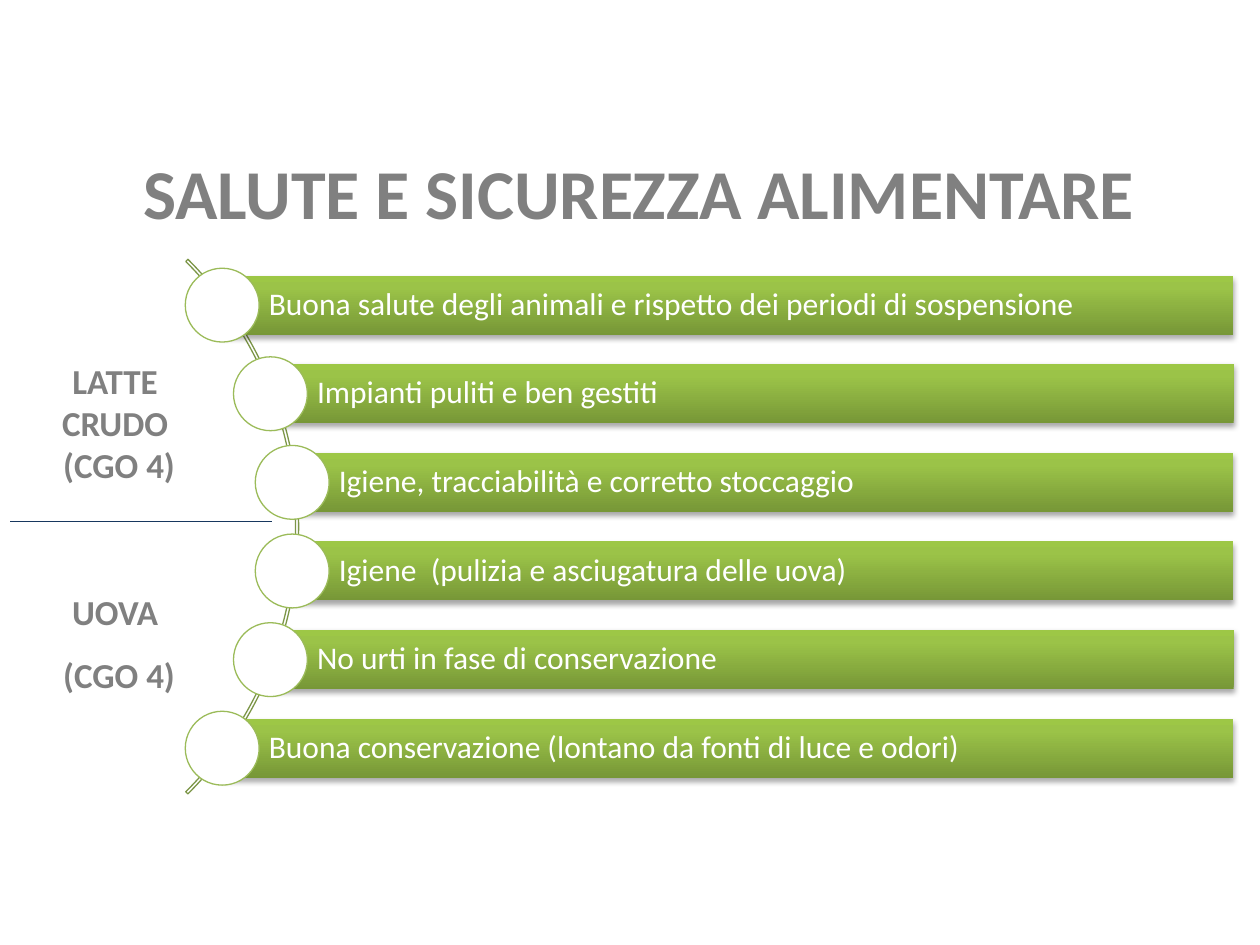
from copy import deepcopy
from dataclasses import dataclass
from math import sqrt

from lxml import etree
from pptx import Presentation
from pptx.dml.color import RGBColor
from pptx.enum.shapes import MSO_CONNECTOR, MSO_SHAPE
from pptx.enum.text import MSO_ANCHOR, MSO_AUTO_SIZE, PP_ALIGN
from pptx.oxml.ns import qn
from pptx.util import Inches, Pt

MIDDLE = MSO_ANCHOR.MIDDLE
LEFT, CENTER = PP_ALIGN.LEFT, PP_ALIGN.CENTER
TITLE_ONLY = 5


@dataclass(frozen=True)
class Theme:
    font: str = "Calibri"
    title_size: int = 40
    group_size: int = 20
    bar_size: int = 18
    hairline: float = 0.75
    grey: str = "808080"
    white: str = "FFFFFF"
    disc_edge: str = "9BBB59"
    arc_edge: str = "7C9647"
    divider: str = "17375E"
    # Bar shading from bottom to top
    bar_stops: tuple = ((0, "779737"), (0.8, "9BC348"), (1, "9DC746"))


@dataclass(frozen=True)
class Box:
    left: float
    top: float
    width: float
    height: float

    def emu(self):
        return [Inches(v) for v in (self.left, self.top, self.width, self.height)]


THEME = Theme()
REQUIREMENTS = [
    "Buona salute degli animali e rispetto dei periodi di sospensione",
    "Impianti puliti e ben gestiti",
    "Igiene, tracciabilità e corretto stoccaggio",
    "Igiene  (pulizia e asciugatura delle uova)",
    "No urti in fase di conservazione",
    "Buona conservazione (lontano da fonti di luce e odori)",
]


def rgb(code):
    return RGBColor.from_string(code)


def style_line(line, color):
    line.color.rgb = rgb(color)
    line.width = Pt(THEME.hairline)


def write(frame, lines, size, color, align, bold=False, spacings=(1,), insets=(0.1, 0.05)):
    """Fill a text frame; the last spacing goes on for the remaining lines."""
    frame.word_wrap = True
    frame.auto_size = MSO_AUTO_SIZE.NONE
    frame.vertical_anchor = MIDDLE
    frame.margin_left, frame.margin_right = Inches(insets[0]), Inches(insets[1])
    frame.margin_top = frame.margin_bottom = Inches(0.05)
    for i, line in enumerate(lines):
        paragraph = frame.paragraphs[0] if i == 0 else frame.add_paragraph()
        paragraph.text = line
        paragraph.alignment = align
        paragraph.line_spacing = float(spacings[min(i, len(spacings) - 1)])
        paragraph.space_before = Pt(0)
        font = paragraph.font
        font.name, font.size, font.bold = THEME.font, Pt(size), bold
        font.color.rgb = rgb(color)


def shade_bar(bar):
    """Three-stop vertical gradient and a soft shadow below."""
    bar.fill.gradient()
    bar.fill.gradient_angle = 90
    stop_list = bar.element.spPr.find(qn("a:gradFill")).find(qn("a:gsLst"))
    stop_list.append(deepcopy(stop_list[-1]))
    for stop, (position, color) in zip(bar.fill.gradient_stops, THEME.bar_stops):
        stop.position = position
        stop.color.rgb = rgb(color)
    bar.line.fill.background()
    bar.shadow.inherit = False
    effects = bar.element.spPr.find(qn("a:effectLst"))
    shadow = etree.SubElement(effects, qn("a:outerShdw"), blurRad="40000",
                              dist="23000", dir="5400000", rotWithShape="0")
    color = etree.SubElement(shadow, qn("a:srgbClr"), val="000000")
    etree.SubElement(color, qn("a:alpha"), val="35000")


def add_title(slide, box):
    title = slide.shapes.title
    title.left, title.top, title.width, title.height = box.emu()
    write(title.text_frame, ["SALUTE E SICUREZZA ALIMENTARE"], THEME.title_size,
          THEME.grey, CENTER, bold=True, spacings=(1.5,), insets=(0.1, 0.1))


def add_requirements(slide, box, requirements):
    """Bars whose round heads follow an arc that bulges to the right."""
    radius, arc_x = 3, -0.63
    arc_y = box.top + box.height / 2
    row = box.height / len(requirements)
    bar_height, disc = row * 2 / 3, row * 5 / 6

    # Arc behind the bars, from -45 to 45 degrees
    arc_box = Box(arc_x - radius, arc_y - radius, 2 * radius, 2 * radius)
    arc = slide.shapes.add_shape(MSO_SHAPE.BLOCK_ARC, *arc_box.emu())
    for i, value in enumerate((189, 27, 0.004)):
        arc.adjustments[i] = value
    arc.fill.background()
    style_line(arc.line, THEME.arc_edge)
    arc.shadow.inherit = False

    for i, requirement in enumerate(requirements):
        y = box.top + (i + 0.5) * row
        x = arc_x + sqrt((radius - 0.03) ** 2 - (y - arc_y) ** 2)

        # Bar
        bar_box = Box(x, y - bar_height / 2, box.left + box.width - x, bar_height)
        bar = slide.shapes.add_shape(MSO_SHAPE.RECTANGLE, *bar_box.emu())
        shade_bar(bar)
        write(bar.text_frame, [requirement], THEME.bar_size, THEME.white, LEFT,
              spacings=(0.9,), insets=(0.37, 0.05))

        # Round head
        head_box = Box(x - disc / 2, y - disc / 2, disc, disc)
        head = slide.shapes.add_shape(MSO_SHAPE.OVAL, *head_box.emu())
        head.fill.solid()
        head.fill.fore_color.rgb = rgb(THEME.white)
        style_line(head.line, THEME.disc_edge)
        head.shadow.inherit = False


def add_group_label(slide, box, lines, spacings=(1,)):
    label = slide.shapes.add_textbox(*box.emu())
    write(label.text_frame, lines, THEME.group_size, THEME.grey, CENTER,
          bold=True, spacings=spacings, insets=(0.1, 0.1))


def add_divider(slide, box):
    left, top, width, _ = box.emu()
    divider = slide.shapes.add_connector(MSO_CONNECTOR.STRAIGHT, left, top, left + width, top)
    style_line(divider.line, THEME.divider)
    etree.SubElement(divider.element.spPr, qn("a:effectLst"))


def main():
    deck = Presentation()
    deck.slide_width, deck.slide_height = Inches(10), Inches(7.5)
    slide = deck.slides.add_slide(deck.slide_layouts[TITLE_ONLY])

    add_title(slide, Box(0.57, 0.76, 9, 1.18))
    add_requirements(slide, Box(1.47, 2.07, 8.32, 4.22), REQUIREMENTS)
    add_group_label(slide, Box(0.04, 2.75, 1.81, 1.2), ["LATTE ", "CRUDO ", "(CGO 4)"])
    add_group_label(slide, Box(0.04, 4.5, 1.81, 1.2), ["UOVA ", "(CGO 4)"], (1, 1.5))
    add_divider(slide, Box(0.08, 4.14, 2.08, 0))

    deck.save("out.pptx")


if __name__ == "__main__":
    main()
